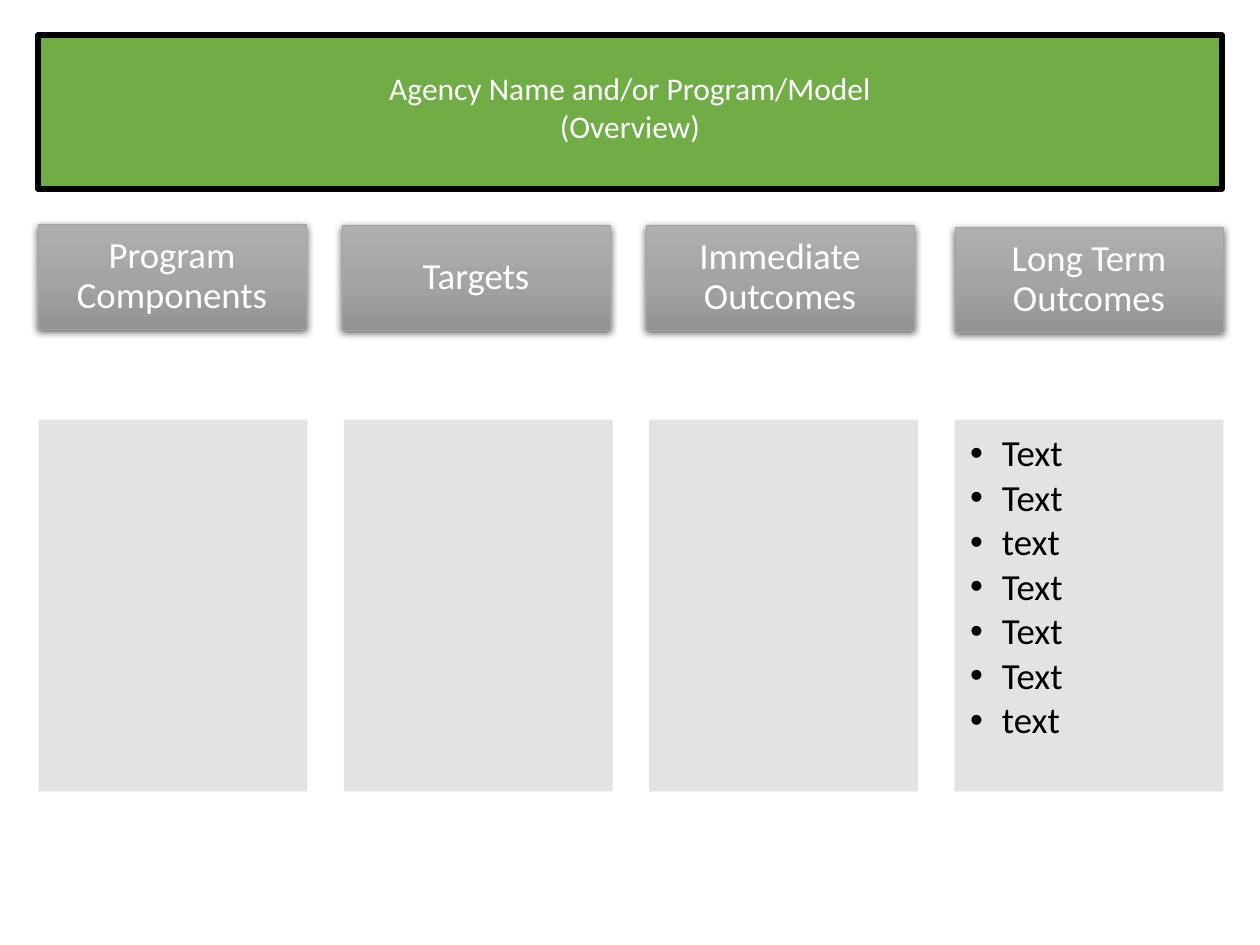
from copy import deepcopy
from dataclasses import dataclass

from lxml.etree import SubElement
from pptx import Presentation
from pptx.dml.color import RGBColor
from pptx.enum.shapes import MSO_SHAPE as Shape
from pptx.enum.text import MSO_ANCHOR as Anchor, MSO_AUTO_SIZE as AutoSize, PP_ALIGN as Align
from pptx.oxml.ns import qn
from pptx.util import Emu, Pt

BANNER_LINES = ["Agency Name and/or Program/Model", "(Overview)"]
# heading, left, top
HEADINGS = [
    ("Program Components", 38, 224),
    ("Targets", 342, 225),
    ("Immediate Outcomes", 646, 225),
    ("Long Term Outcomes", 955, 227),
]
BULLETS = ["Text", "Text", "text", "Text", "Text", "Text", "text"]

EMU_PER_PX = 914400 / 126
BANNER = (38, 35, 1184, 154)
COLUMN_WIDTH, HEADING_HEIGHT = 268, 105
PANEL_LEFT, PANEL_TOP, PANEL_HEIGHT, LAST_PANEL_LEFT = 39, 420, 371, 955


@dataclass(frozen=True)
class Theme:
    font: str = "Calibri"
    banner: str = "70AD47"
    border: str = "000000"
    light: str = "FFFFFF"
    dark: str = "000000"
    heading_stops: tuple = ((0, "AFAFAF"), (0.5, "A5A5A5"), (1, "939393"))
    heading_line: str = "A5A5A5"
    panel: str = "E1E1E1"
    banner_size: int = 18
    text_size: int = 21


THEME = Theme()


def px(value):
    return Emu(round(value * EMU_PER_PX))


def rgb(value):
    return RGBColor.from_string(value)


def place(box, left, top, width, height):
    box.left, box.top, box.width, box.height = map(px, (left, top, width, height))


def outline(box, color, points):
    box.line.color.rgb = rgb(color)
    box.line.width = Pt(points)


def write(box, lines, size, color, align, anchor, insets):
    """Fill the box with one paragraph per line; insets are left, top, right, bottom."""
    frame = box.text_frame
    frame.text = "\n".join(lines)
    frame.word_wrap = True
    frame.auto_size = AutoSize.NONE
    frame.vertical_anchor = anchor
    (frame.margin_left, frame.margin_top,
     frame.margin_right, frame.margin_bottom) = map(px, insets)
    for para in frame.paragraphs:
        para.alignment = align
        para.space_before = Pt(0)
        para.font.name = THEME.font
        para.font.size = Pt(size)
        para.font.color.rgb = rgb(color)
    return frame.paragraphs


def shade(box):
    """Give the box its three-stop gradient and soft shadow."""
    box.fill.gradient()
    box.fill.gradient_angle = 270
    stop_list = box._element.spPr.find(qn("a:gradFill")).find(qn("a:gsLst"))
    stop_list.insert(1, deepcopy(stop_list[0]))
    for stop, (position, color) in zip(box.fill.gradient_stops, THEME.heading_stops):
        stop.position = position
        stop.color.rgb = rgb(color)

    box.shadow.inherit = False
    effects = box._element.spPr.find(qn("a:effectLst"))
    shadow = SubElement(effects, qn("a:outerShdw"), blurRad=str(Pt(4.5)),
                        dist=str(Pt(1.5)), dir="5400000", algn="ctr", rotWithShape="0")
    color = SubElement(shadow, qn("a:srgbClr"), val=THEME.dark)
    SubElement(color, qn("a:alpha"), val="63000")


def add_heading(page, text, left, top):
    box = page.shapes.add_shape(Shape.RECTANGLE, 0, 0, 0, 0)
    place(box, left, top, COLUMN_WIDTH, HEADING_HEIGHT)
    shade(box)
    outline(box, THEME.heading_line, 0.5)
    for para in write(box, [text], THEME.text_size, THEME.light,
                      Align.CENTER, Anchor.MIDDLE, (20, 11, 20, 11)):
        para.line_spacing = 0.9


def style_panel(box, left):
    place(box, left, PANEL_TOP, COLUMN_WIDTH, PANEL_HEIGHT)
    box.fill.solid()
    box.fill.fore_color.rgb = rgb(THEME.panel)
    outline(box, THEME.panel, 0.5)
    for color in box._element.spPr.iter(qn("a:srgbClr")):
        SubElement(color, qn("a:alpha"), val="90000")


def main():
    deck = Presentation()
    deck.slide_width, deck.slide_height = px(1260), px(945)
    page = deck.slides.add_slide(deck.slide_layouts[1])
    banner, last_panel = page.placeholders

    place(banner, *BANNER)
    banner.fill.solid()
    banner.fill.fore_color.rgb = rgb(THEME.banner)
    outline(banner, THEME.border, 3)
    write(banner, BANNER_LINES, THEME.banner_size, THEME.light,
          Align.CENTER, Anchor.MIDDLE, (13, 6, 13, 16))

    for heading in HEADINGS:
        add_heading(page, *heading)

    pitch = (LAST_PANEL_LEFT - PANEL_LEFT) / (len(HEADINGS) - 1)
    for column in range(len(HEADINGS) - 1):
        panel = page.shapes.add_shape(Shape.RECTANGLE, 0, 0, 0, 0)
        style_panel(panel, PANEL_LEFT + column * pitch)
        panel.shadow.inherit = False

    style_panel(last_panel, LAST_PANEL_LEFT)
    for para in write(last_panel, BULLETS, THEME.text_size, THEME.dark,
                      Align.LEFT, Anchor.TOP, (15, 15, 20, 23)):
        para.line_spacing = 0.9
        para.space_after = Pt(2.75)
        properties = para._p.get_or_add_pPr()
        properties.set("marL", str(px(32)))
        properties.set("indent", str(px(-32)))

    deck.save("out.pptx")


if __name__ == "__main__":
    main()
